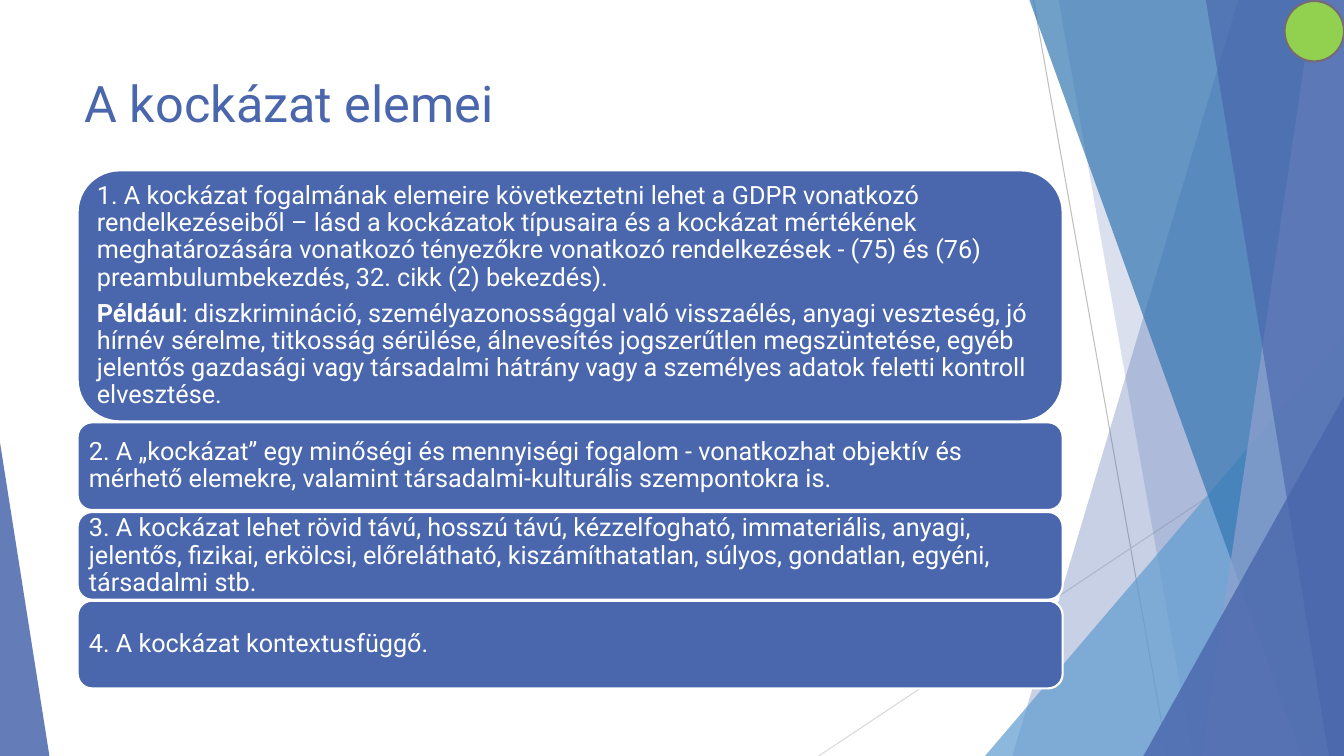
from lxml import etree
from pptx import Presentation
from pptx.dml.color import RGBColor as RGB
from pptx.enum.shapes import MSO_CONNECTOR as CONN, MSO_SHAPE as SHAPE
from pptx.enum.text import MSO_ANCHOR as ANCHOR, PP_ALIGN as ALIGN
from pptx.oxml.ns import qn
from pptx.util import Inches, Pt

W, H = 13.33, 7.5
FONT = "Roboto"
COLORS = {
    "blue": "4A66AC", "sky": "629DD1", "teal": "3477B2", "lilac": "90A2CF",
    "white": "FFFFFF", "gray": "BFBFBF", "light_gray": "D9D9D9",
    "green": "92D050", "outline": "746B76",
}


def paint(sp, fill, alpha=100, line=None):
    sp.shadow.inherit = False
    sp.fill.solid()
    sp.fill.fore_color.rgb = RGB.from_string(COLORS[fill])
    if alpha < 100:
        clr = sp.fill._xPr.find(".//" + qn("a:srgbClr"))
        etree.SubElement(clr, qn("a:alpha")).set("val", str(alpha * 1000))
    if line:
        sp.line.color.rgb = RGB.from_string(COLORS[line])
        sp.line.width = Pt(1.5)
    else:
        sp.line.fill.background()


def style(r, size, color, bold=False):
    r.font.name = FONT
    r.font.size = Pt(size)
    r.font.bold = bold
    r.font.color.rgb = RGB.from_string(COLORS[color])


prs = Presentation()
prs.slide_width, prs.slide_height = Inches(W), Inches(H)
s = prs.slides.add_slide(prs.slide_layouts[6])

for x1, y1, x2, y2, color in [
    (10.25, 0, 11.58, H, "gray"),
    (W, 4.03, 8.12, H, "light_gray"),
]:
    cx = s.shapes.add_connector(CONN.STRAIGHT, Inches(x1), Inches(y1), Inches(x2), Inches(y2))
    cx.line.color.rgb = RGB.from_string(COLORS[color])
    cx.line.width = Pt(0.75)
    etree.SubElement(cx._element.spPr, qn("a:effectLst"))

bands = [
    ("band", 12.28, 10.04, "blue", 30),
    ("band", 10.5, 11.83, "blue", 20),
    ("triangle", 9.77, 3.33, 3.56, 1, "sky", 72),
    ("band", 10.21, 12.91, "teal", 70),
    ("band", 13.03, 11.92, "lilac", 70),
    ("band", 11.96, 13.18, "blue", 65),
    ("triangle", 11.34, 3.93, 1.99, 1, "blue", 80),
    ("triangle", 0, 4.39, 0.49, 0, "blue", 85),
]
for kind, *geometry, color, alpha in bands:
    if kind == "band":
        top_x, bottom_x = geometry
        fb = s.shapes.build_freeform(Inches(top_x), 0)
        fb.add_line_segments(
            [(Inches(x), Inches(y)) for x, y in [(W, 0), (W, H), (bottom_x, H)]], close=True)
        sp = fb.convert_to_shape()
    else:
        x, y, w, apex = geometry
        sp = s.shapes.add_shape(
            SHAPE.ISOSCELES_TRIANGLE, Inches(x), Inches(y), Inches(w), Inches(H - y))
        sp.adjustments[0] = apex
    paint(sp, color, alpha)

title = s.shapes.add_textbox(Inches(0.74), Inches(0.67), Inches(9.4), Inches(0.93))
tf = title.text_frame
tf.word_wrap = True
tf.text = "A kockázat elemei"
style(tf.paragraphs[0].runs[0], 36, "blue")

cards = [
    (1.69, 2.49, [
        ["1. A kockázat fogalmának elemeire következtetni lehet a GDPR vonatkozó rendelkezéseiből – lásd a kockázatok típusaira és a kockázat mértékének meghatározására vonatkozó tényezőkre vonatkozó rendelkezések - (75) és (76) preambulumbekezdés, 32. cikk (2) bekezdés)."],
        ["Például", ": diszkrimináció, személyazonossággal való visszaélés, anyagi veszteség, jó hírnév sérelme, titkosság sérülése, álnevesítés jogszerűtlen megszüntetése, egyéb jelentős gazdasági vagy társadalmi hátrány vagy a személyes adatok feletti kontroll elvesztése."],
    ]),
    (4.19, 0.87, [["2. A „kockázat” egy minőségi és mennyiségi fogalom - vonatkozhat objektív és mérhető elemekre, valamint társadalmi-kulturális szempontokra is."]]),
    (5.08, 0.87, [["3. A kockázat lehet rövid távú, hosszú távú, kézzelfogható, immateriális, anyagi, jelentős, fizikai, erkölcsi, előrelátható, kiszámíthatatlan, súlyos, gondatlan, egyéni, társadalmi stb."]]),
    (5.96, 0.87, [["4. A kockázat kontextusfüggő."]]),
]
for y, h, paragraphs in cards:
    sp = s.shapes.add_shape(
        SHAPE.ROUNDED_RECTANGLE, Inches(0.77), Inches(y), Inches(9.77), Inches(h))
    paint(sp, "blue", line="white")
    tf = sp.text_frame
    tf.word_wrap = True
    tf.vertical_anchor = ANCHOR.MIDDLE
    tf.margin_left = tf.margin_right = tf.margin_top = tf.margin_bottom = Inches(0.07)
    for i, parts in enumerate(paragraphs):
        p = tf.add_paragraph() if i else tf.paragraphs[0]
        p.alignment = ALIGN.LEFT
        p.line_spacing = 0.9
        p.space_after = Pt(6.3)
        for part in parts:
            r = p.add_run()
            r.text = part
            style(r, 18, "white", bold=part == "Például")

dot = s.shapes.add_shape(SHAPE.OVAL, Inches(12.74), Inches(0.01), Inches(0.59), Inches(0.6))
paint(dot, "green", line="outline")

prs.save("out.pptx")
